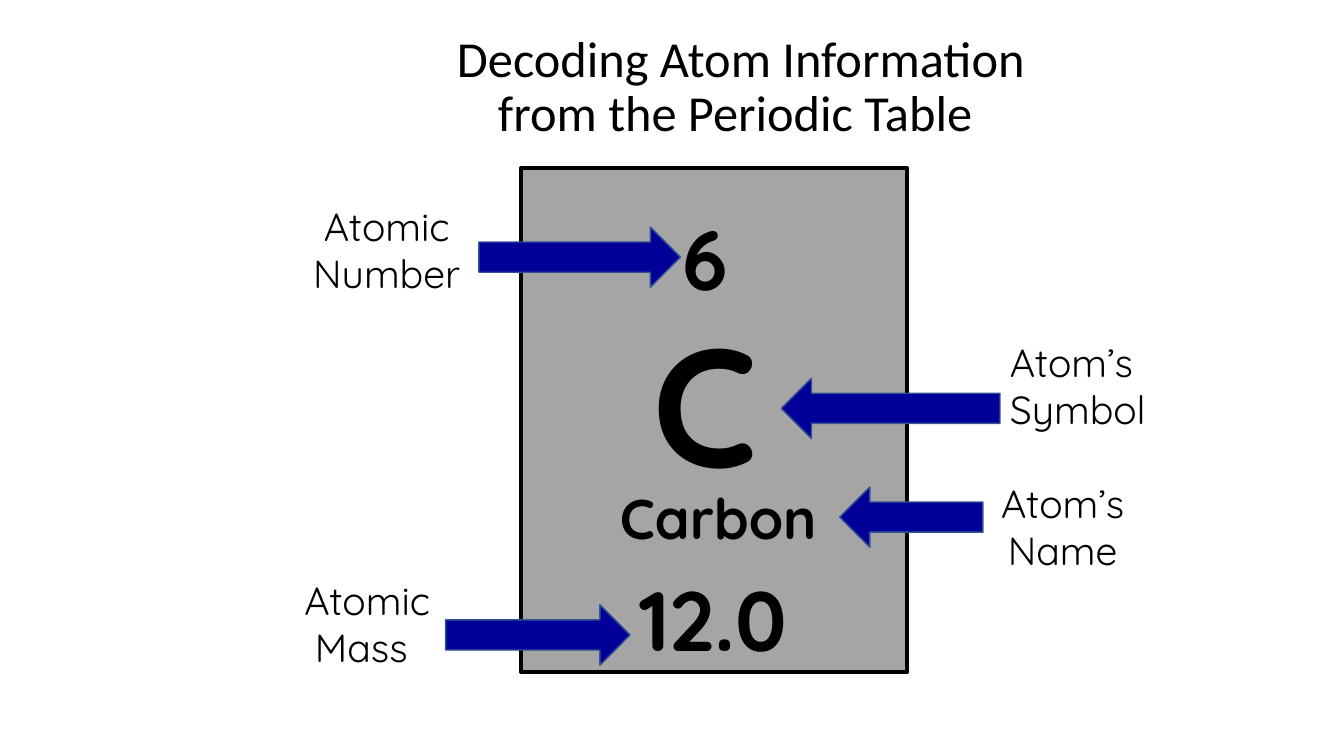
from pptx import Presentation
from pptx.dml.color import RGBColor
from pptx.enum.shapes import MSO_SHAPE
from pptx.enum.text import MSO_ANCHOR, PP_ALIGN
from pptx.util import Cm, Pt

RECTANGLE = MSO_SHAPE.RECTANGLE
RIGHT_ARROW = MSO_SHAPE.RIGHT_ARROW
LEFT = PP_ALIGN.LEFT
CENTER = PP_ALIGN.CENTER
TOP = MSO_ANCHOR.TOP
MIDDLE = MSO_ANCHOR.MIDDLE


def color(value):
    return RGBColor.from_string(value)


class SlideBuilder:
    heading_font = "Calibri"
    body_font = "Quicksand"
    ink = "000000"
    tile_fill = "A5A5A5"
    arrow_fill = "000099"
    arrow_line = "325491"
    arrow_height = 1.52
    label_height = 2.64

    def __init__(self, slide):
        self.slide = slide

    def shape(self, parent, kind, box, fill, line, line_width):
        shape = parent.shapes.add_shape(kind, *map(Cm, box))
        shape.shadow.inherit = False
        shape.fill.solid()
        shape.fill.fore_color.rgb = color(fill)
        shape.line.color.rgb = color(line)
        shape.line.width = Pt(line_width)
        return shape

    def text(self, parent, box, paragraphs, size, font, align=CENTER,
             bold=False, anchor=TOP, spacing=None):
        frame = parent.shapes.add_textbox(*map(Cm, box)).text_frame
        frame.word_wrap = True
        frame.vertical_anchor = anchor
        for index, lines in enumerate(paragraphs):
            paragraph = frame.add_paragraph() if index else frame.paragraphs[0]
            paragraph.alignment = align
            if spacing:
                paragraph.line_spacing = spacing
            for row, line in enumerate(lines):
                if row:
                    paragraph.add_line_break()
                run = paragraph.add_run()
                run.text = line
                run.font.name = font
                run.font.size = Pt(size)
                run.font.bold = bold
                run.font.color.rgb = color(self.ink)

    def title(self, box, lines):
        self.text(self.slide, box, [lines], 36, self.heading_font,
                  anchor=MIDDLE, spacing=0.9)

    def element_tile(self, box, entries):
        tile = self.slide.shapes.add_group_shape()
        self.shape(tile, RECTANGLE, box, self.tile_fill, self.ink, 3)
        for entry, size, entry_box in entries:
            self.text(tile, entry_box, [[entry]], size, self.body_font, bold=True)

    def label(self, left, top, width, paragraphs, align):
        self.text(self.slide, (left, top, width, self.label_height),
                  [[line] for line in paragraphs], 28, self.body_font, align)

    def arrow(self, left, top, width, rotation):
        arrow = self.shape(self.slide, RIGHT_ARROW,
                           (left, top, width, self.arrow_height),
                           self.arrow_fill, self.arrow_line, 1)
        arrow.rotation = rotation


def main():
    presentation = Presentation()
    presentation.slide_width = Cm(33.87)
    presentation.slide_height = Cm(19.05)
    builder = SlideBuilder(
        presentation.slides.add_slide(presentation.slide_layouts[6]))

    builder.title((8.26, 0.64, 20.83, 3.18),
                  ["Decoding Atom Information", "from the Periodic Table "])

    builder.element_tile((13.13, 4.24, 9.73, 12.7), [
        ("C", 120, (16.08, 7.42, 3.38, 6.15)),
        ("Carbon", 40, (15.24, 12.07, 5.72, 1.96)),
        ("6", 60, (16.51, 5.08, 2.54, 2.82)),
        ("12.0", 60, (15.44, 14.17, 5.08, 2.82)),
    ])

    for label in [
        (25.2, 8.41, 5.51, ["Atom’s", "Symbol"], LEFT),
        (24.33, 11.96, 4.9, ["Atom’s Name"], CENTER),
        (6.99, 4.98, 5.51, ["Atomic Number"], CENTER),
        (7.42, 14.4, 5.23, ["Atomic", " Mass"], LEFT),
    ]:
        builder.label(*label)

    for arrow in [
        (12.07, 5.72, 5.08, 0),
        (19.69, 9.53, 5.51, 180),
        (11.23, 15.24, 4.65, 0),
        (21.16, 12.27, 3.61, 180),
    ]:
        builder.arrow(*arrow)

    presentation.save("out.pptx")


if __name__ == "__main__":
    main()
